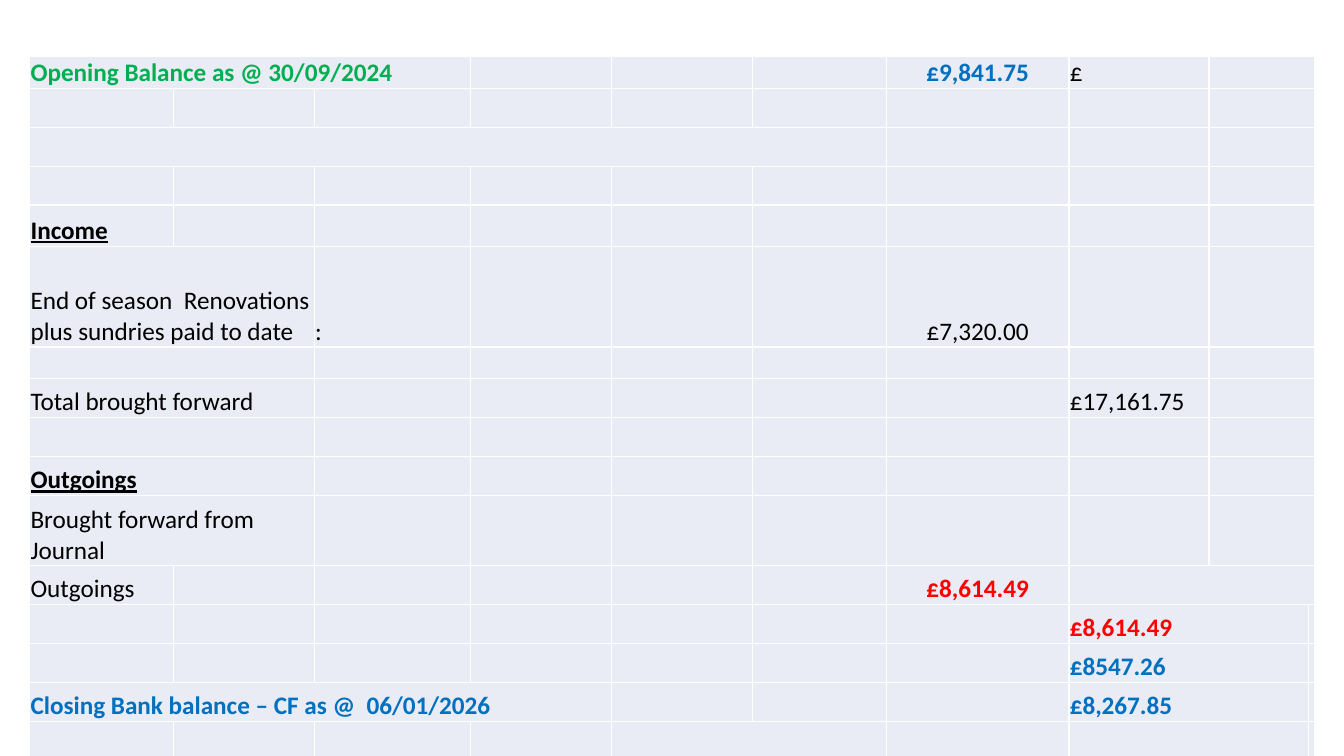
from pptx import Presentation
from pptx.dml.color import RGBColor
from pptx.enum.text import MSO_ANCHOR, PP_ALIGN
from pptx.oxml import parse_xml
from pptx.oxml.ns import nsdecls
from pptx.util import Cm, Pt

COL_WIDTHS = [3.62, 3.55, 3.94, 3.55, 3.55, 3.38, 4.6, 3.53, 2.5, 0.15]
ROW_HEIGHTS = ([0.78] + [0.98] * 3 + [1.04, 2.54, 0.8] + [0.98] * 3
               + [1.77] + [0.98] * 5)
MERGES = ([(0, 0, 2), (2, 0, 5), (11, 7, 9), (14, 0, 3), (15, 4, 5)]
          + [(row, 8, 9) for row in range(11)]
          + [(row, 0, 1) for row in range(5, 11)]
          + [(row, 7, 8) for row in range(12, 16)])
BLACK, GREEN, BLUE, RED = "000000", "00B050", "0070C0", "FF0000"
AMOUNT_COL = 6
ENTRIES = [
    (0, 0, "Opening Balance as @ 30/09/2024", GREEN, True, False),
    (0, AMOUNT_COL, "£9,841.75", BLUE, True, False),
    (0, 7, "£", BLACK, False, False),
    (4, 0, "Income", BLACK, True, True),
    (5, 0, "End of season  Renovations plus sundries paid to date",
     BLACK, False, False),
    (5, 2, ":", BLACK, False, False),
    (5, AMOUNT_COL, "£7,320.00", BLACK, False, False),
    (7, 0, "Total brought forward", BLACK, False, False),
    (7, 7, "£17,161.75", BLACK, False, False),
    (9, 0, "Outgoings", BLACK, True, True),
    (10, 0, "Brought forward from Journal", BLACK, False, False),
    (11, 0, "Outgoings", BLACK, False, False),
    (11, AMOUNT_COL, "£8,614.49", RED, True, False),
    (12, 7, "£8,614.49", RED, True, False),
    (13, 7, "£8547.26", BLUE, True, False),
    (14, 0, "Closing Bank balance – CF as @  06/01/2026", BLUE, True, False),
    (14, 7, "£8,267.85", BLUE, True, False),
]


def rgb(value):
    """Turn a hex string into a colour."""
    return RGBColor.from_string(value)


def style_cell(cell):
    """Give a cell its margins, white borders, fill and base font."""
    cell.margin_left = cell.margin_right = cell.margin_top = Cm(0.02)
    cell.margin_bottom = 0
    cell.vertical_anchor = MSO_ANCHOR.BOTTOM
    tcPr = cell._tc.get_or_add_tcPr()
    for side in "LRTB":
        tcPr.append(parse_xml(
            f'<a:ln{side} {nsdecls("a")} w="12700"><a:solidFill>'
            f'<a:srgbClr val="FFFFFF"/></a:solidFill></a:ln{side}>'))
    cell.fill.solid()
    cell.fill.fore_color.rgb = rgb("E9EBF5")
    cell.text_frame.paragraphs[0].font.size = Pt(18)


def add_grid(s):
    """Add the styled and merged account table."""
    frame = s.shapes.add_table(len(ROW_HEIGHTS), len(COL_WIDTHS),
                               Cm(0.75), Cm(1.43), Cm(sum(COL_WIDTHS)),
                               Cm(sum(ROW_HEIGHTS)))
    table = frame.table
    table.first_row = table.horz_banding = False
    for column, width in zip(table.columns, COL_WIDTHS):
        column.width = Cm(width)
    for row, height in zip(table.rows, ROW_HEIGHTS):
        row.height = Cm(height)
    for cell in table.iter_cells():
        style_cell(cell)
    for row, first, last in MERGES:
        table.cell(row, first).merge(table.cell(row, last))
    return table


def add_entry(table, row, col, text, color, bold, underline):
    """Write one text run into a cell."""
    p = table.cell(row, col).text_frame.paragraphs[0]
    p.alignment = PP_ALIGN.CENTER if col == AMOUNT_COL else PP_ALIGN.LEFT
    r = p.add_run()
    r.text = text
    r.font.name = "Calibri"
    r.font.size = Pt(18)
    r.font.bold = bold
    r.font.underline = underline
    r.font.color.rgb = rgb(color)


def main():
    """Build the balance slide."""
    prs = Presentation()
    prs.slide_width, prs.slide_height = Cm(33.87), Cm(19.05)
    s = prs.slides.add_slide(prs.slide_layouts[6])
    table = add_grid(s)
    for entry in ENTRIES:
        add_entry(table, *entry)
    prs.save("out.pptx")


if __name__ == "__main__":
    main()
